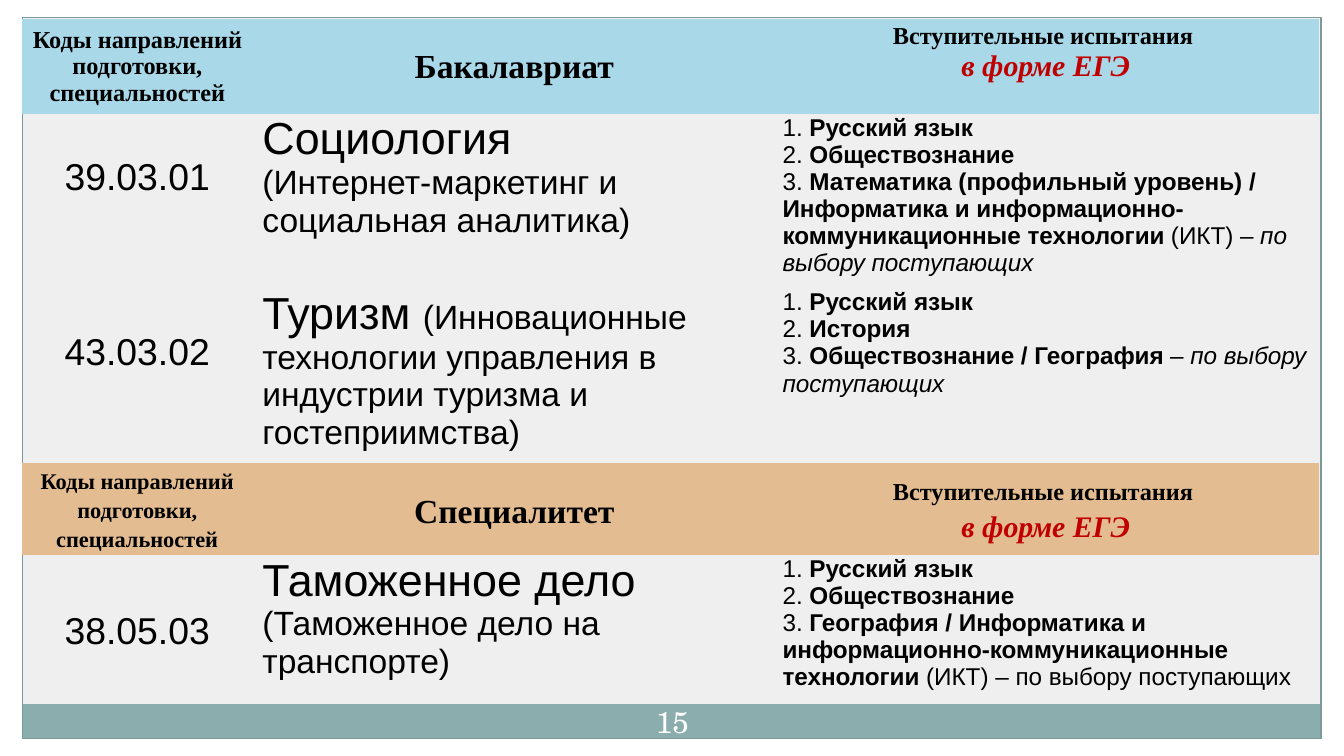
from pptx import Presentation
from pptx.dml.color import RGBColor
from pptx.enum.shapes import MSO_SHAPE
from pptx.enum.text import MSO_ANCHOR, PP_ALIGN
from pptx.util import Cm, Pt

RECT = MSO_SHAPE.RECTANGLE
MIDDLE, TOP = MSO_ANCHOR.MIDDLE, MSO_ANCHOR.TOP
CENTER, LEFT = PP_ALIGN.CENTER, PP_ALIGN.LEFT

WHITE = RGBColor(0xFF, 0xFF, 0xFF)
BLACK = RGBColor(0, 0, 0)
RED = RGBColor(0xC0, 0, 0)
GRAY = RGBColor(0xEF, 0xEF, 0xEF)
TEAL = RGBColor(0x8C, 0xAD, 0xAE)
EDGE = RGBColor(0x7C, 0x99, 0x9A)
BLUE = RGBColor(0xA9, 0xD8, 0xE9)
SAND = RGBColor(0xE3, 0xBC, 0x92)

SANS, SERIF, SCHOOL = "Arial", "Times New Roman", "TeX Gyre Schola"
PLAIN_STYLE = "{2D5ABB26-0587-4C30-8999-92F81FD0307C}"
WIDE, HIGH = 25.4, 14.29
COLS = [4.42, 9.83, 10.26]
ROWS = [1.8, 3.3, 3.29, 1.75, 2.86]
CHOICE = "по выбору поступающих"

LEVELS = [
    ("Бакалавриат", BLUE, 13, 1.0, 0.51, [
        ("39.03.01", 0.81,
         [[("Социология", 24)],
          [("(Интернет-маркетинг и социальная аналитика)", 18)]],
         ["Русский язык", "Обществознание",
          "Математика (профильный уровень) / Информатика и "
          "информационно-коммуникационные технологии"],
         [(" (ИКТ) – ", False), (CHOICE, True)]),
        ("43.03.02", 0.81,
         [[("Туризм ", 24),
           ("(Инновационные технологии управления в индустрии "
            "туризма и гостеприимства)", 18)]],
         ["Русский язык", "История", "Обществознание / География"],
         [(" – ", False), (CHOICE, True)]),
    ]),
    ("Специалитет", SAND, 12, 1.15, 0, [
        ("38.05.03", 0,
         [[("Таможенное дело ", 24), ("(Таможенное дело на транспорте)", 18)]],
         ["Русский язык", "Обществознание",
          "География / Информатика и "
          "информационно-коммуникационные технологии"],
         [(" (ИКТ) – " + CHOICE, False)]),
    ]),
]


def style(run, size, face=SANS, color=BLACK, bold=False, italic=False):
    """Format one run."""
    font = run.font
    font.size, font.name = Pt(size), face
    font.bold, font.italic = bold, italic
    font.color.rgb = color


def add_run(para, text, size, **look):
    """Append a formatted run to a paragraph."""
    run = para.add_run()
    run.text = text
    style(run, size, **look)


def write(frame, lines, align=LEFT, gap=1.0):
    """Fill a frame with lines, each a list of (text, size, look) runs."""
    for num, line in enumerate(lines):
        para = frame.paragraphs[0] if num == 0 else frame.add_paragraph()
        para.alignment, para.line_spacing = align, gap
        for text, size, look in line:
            add_run(para, text, size, **look)


def set_cell(cell, anchor=TOP, fill=None, top=0, bottom=0):
    """Set margins, anchor and fill of a cell."""
    cell.margin_left, cell.margin_right = Cm(0.13), Cm(0.18)
    cell.margin_top, cell.margin_bottom = Cm(top), Cm(bottom)
    cell.vertical_anchor = anchor
    if fill is None:
        cell.fill.background()
    else:
        cell.fill.solid()
        cell.fill.fore_color.rgb = fill


def fill_head(cells, name, fill, size, gap, bottom):
    """Write the header row of one level of study."""
    bold = {"face": SERIF, "bold": True}
    red = {**bold, "color": RED, "italic": True}
    texts = [
        [[("Коды направлений подготовки, специальностей", size, bold)]],
        [[(name, 18, bold)]],
        [[("Вступительные испытания ", 13, bold)], [("в форме ЕГЭ", 16, red)]],
    ]
    for cell, lines, low in zip(cells, texts, [0, 0, bottom]):
        set_cell(cell, MIDDLE, fill, bottom=low)
        write(cell.text_frame, lines, CENTER, gap)


def fill_course(cells, code, top, title, exams, tail):
    """Write the row of one course: code, title and exams."""
    set_cell(cells[0], TOP if top else MIDDLE, top=top)
    write(cells[0].text_frame, [[(code, 20, {})]], CENTER)
    set_cell(cells[1])
    write(cells[1].text_frame,
          [[(text, size, {}) for text, size in line] for line in title])
    set_cell(cells[2])
    lines = [[(f"{num}. ", 13, {}), (exam, 13, {"bold": True})]
             for num, exam in enumerate(exams, 1)]
    lines[-1] += [(text, 13, {"italic": slant}) for text, slant in tail]
    write(cells[2].text_frame, lines)


def add_plan(slide, left, top):
    """Add the table of courses and exams."""
    table = slide.shapes.add_table(
        len(ROWS), len(COLS), Cm(left), Cm(top),
        Cm(sum(COLS)), Cm(sum(ROWS))).table
    table.first_row = table.horz_banding = False
    table._tbl.tblPr[0].text = PLAIN_STYLE
    for col, width in zip(table.columns, COLS):
        col.width = Cm(width)
    for row, height in zip(table.rows, ROWS):
        row.height = Cm(height)
    rows = iter(table.rows)
    for *head, courses in LEVELS:
        fill_head(next(rows).cells, *head)
        for course in courses:
            fill_course(next(rows).cells, *course)


def add_rect(slide, left, top, width, height, fill=None):
    """Add a plain filled rectangle, or an outlined one without fill."""
    shape = slide.shapes.add_shape(
        RECT, Cm(left), Cm(top), Cm(width), Cm(height))
    shape.shadow.inherit = False
    if fill is None:
        shape.fill.background()
        shape.line.color.rgb = EDGE
        shape.line.width = Pt(0.75)
    else:
        shape.fill.solid()
        shape.fill.fore_color.rgb = fill
        shape.line.fill.background()


def add_frame(slide, side, edge):
    """Add the white margins, the bottom bar and the outline."""
    inner = WIDE - 2 * side
    add_rect(slide, 0, HIGH - edge, WIDE, edge, WHITE)
    add_rect(slide, 0, 0, WIDE, edge, WHITE)
    add_rect(slide, WIDE - side, 0, side, HIGH, WHITE)
    add_rect(slide, 0, 0, side, HIGH, WHITE)
    add_rect(slide, side, 13.31, inner, 0.64, TEAL)
    add_rect(slide, side, edge, inner, HIGH - 2 * edge)


def add_number(slide, left, top, width, height):
    """Add the page number."""
    frame = slide.shapes.add_textbox(
        Cm(left), Cm(top), Cm(width), Cm(height)).text_frame
    frame.word_wrap = True
    frame.vertical_anchor = MIDDLE
    frame.margin_left = frame.margin_right = Cm(0.13)
    frame.margin_top = frame.margin_bottom = Cm(0.13)
    write(frame, [[("15", 16, {"face": SCHOOL, "color": WHITE})]], CENTER)


def main():
    """Build and save the slide."""
    deck = Presentation()
    deck.slide_width, deck.slide_height = Cm(WIDE), Cm(HIGH)
    slide = deck.slides.add_slide(deck.slide_layouts[6])
    slide.background.fill.solid()
    slide.background.fill.fore_color.rgb = GRAY
    add_frame(slide, 0.43, 0.33)
    add_plan(slide, 0.41, 0.36)
    add_number(slide, 11.86, 13.18, 1.7, 0.91)
    deck.save("out.pptx")


if __name__ == "__main__":
    main()
